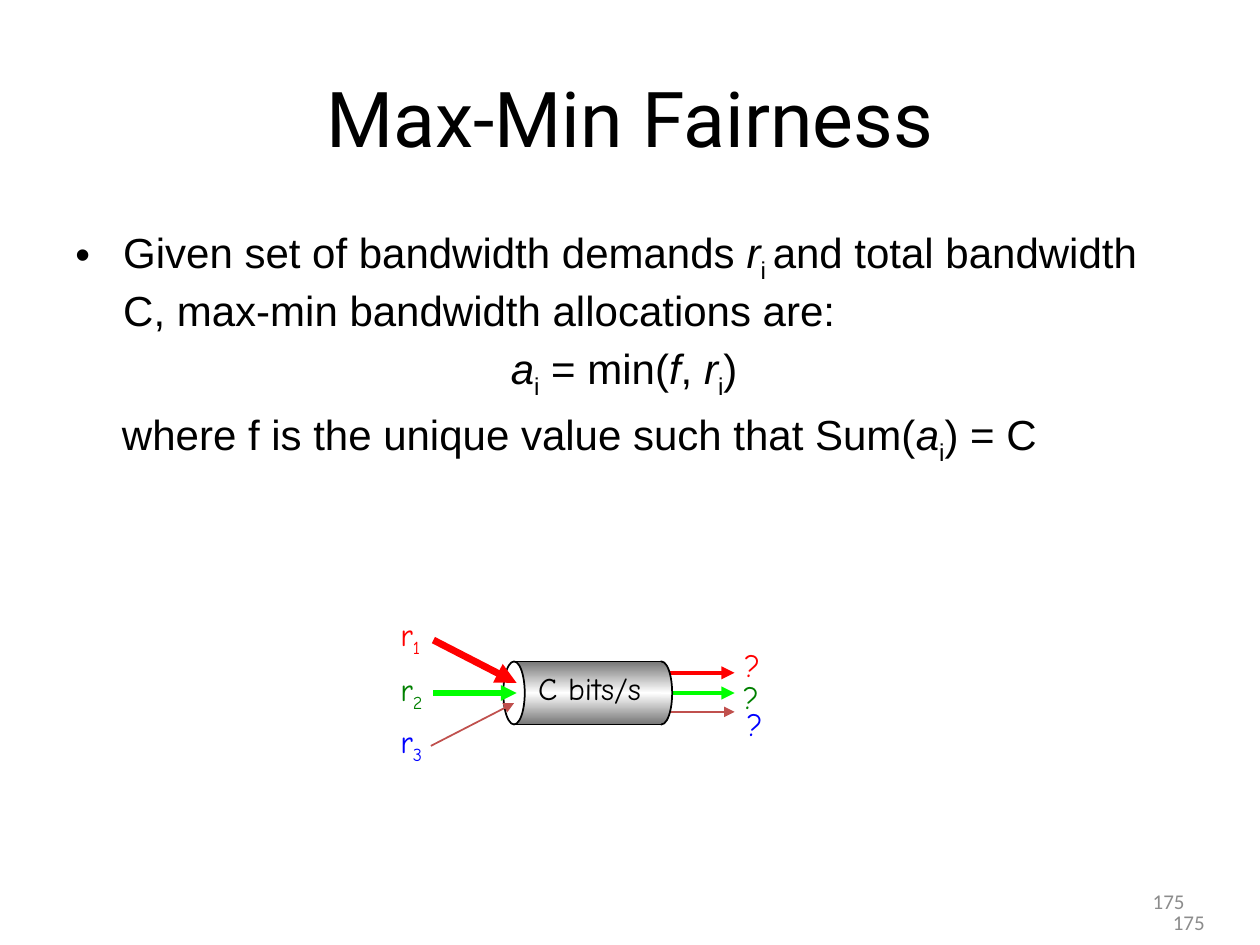
from copy import deepcopy

from lxml import etree
from pptx import Presentation
from pptx import util as u
from pptx.dml.color import RGBColor
from pptx.enum import shapes, text
from pptx.oxml.ns import qn

BLACK = RGBColor(0, 0, 0)
WHITE = RGBColor(255, 255, 255)
STEEL = RGBColor(0x76, 0x76, 0x76)
GREY = RGBColor(0x8C, 0x8C, 0x8C)
RED = RGBColor(255, 0, 0)
GREEN = RGBColor(0, 128, 0)
LIME = RGBColor(0, 255, 0)
BLUE = RGBColor(0, 0, 255)
BRICK = RGBColor(0xC0, 0x50, 0x4D)

HAND = dict(name="Comic Neue", size=u.Pt(18))
LEFT, MID, RIGHT = text.PP_ALIGN.LEFT, text.PP_ALIGN.CENTER, text.PP_ALIGN.RIGHT
TOP, CORE = text.MSO_ANCHOR.TOP, text.MSO_ANCHOR.MIDDLE


def inches(*nums):
    return [u.Inches(n) for n in nums]


def add_runs(para, runs, font, color):
    """Each run is (words, style); style is "", "i" for italic or "sub"."""
    for words, style in runs:
        run = para.add_run()
        run.text = words
        for key, val in font.items():
            setattr(run.font, key, val)
        run.font.color.rgb = color
        if style == "i":
            run.font.italic = True
        elif style == "sub":
            run._r.get_or_add_rPr().set("baseline", "-25000")


def add_text(home, at, runs, font, color, align=LEFT, anchor=TOP, wrap=False):
    """Add a text box and return its first paragraph and its frame."""
    frame = home.add_textbox(*inches(*at)).text_frame
    frame.word_wrap = wrap
    frame.vertical_anchor = anchor
    para = frame.paragraphs[0]
    para.alignment = align
    add_runs(para, runs, font, color)
    return para, frame


def set_indent(para, left, first, bullet=False):
    props = para._p.get_or_add_pPr()
    props.set("marL", str(u.Inches(left)))
    props.set("indent", str(u.Inches(first)))
    if bullet:
        etree.SubElement(props, qn("a:buFont")).set("typeface", "Arial")
        etree.SubElement(props, qn("a:buChar")).set("char", "•")


def add_body(home):
    font = dict(name="Arial", size=u.Pt(24))
    given = [("Given set of bandwidth demands ", ""), ("r", "i"), ("i ", "sub"),
             ("and total bandwidth C, max-min bandwidth allocations are:", "")]
    rule = [("a", "i"), ("i", "sub"), (" = min(", ""), ("f", "i"), (", ", ""),
            ("r", "i"), ("i", "sub"), (") ", "")]
    where = [("where f is the unique value such that Sum(", ""), ("a", "i"),
             ("i", "sub"), (") = C", "")]
    first, frame = add_text(home, (0.5, 1.75, 9, 4.95), given, font, BLACK, wrap=True)
    second, third = frame.add_paragraph(), frame.add_paragraph()
    second.alignment = MID
    add_runs(second, rule, font, BLACK)
    add_runs(third, where, font, BLACK)
    for para in (first, second, third):
        para.space_before = u.Pt(4.8)
    set_indent(first, 0.38, -0.38, bullet=True)
    set_indent(second, 0.38, -0.38)
    set_indent(third, 0.37, 0)


def add_line(home, ends, color, width, arrow=False):
    line = home.add_connector(shapes.MSO_CONNECTOR.STRAIGHT, *inches(*ends))
    line.line.color.rgb = color
    line.line.width = u.Pt(width)
    if arrow:
        etree.SubElement(line.line._get_or_add_ln(), qn("a:tailEnd")).set("type", "triangle")
    etree.SubElement(line._element.spPr, qn("a:effectLst"))
    return line


def add_solid(home, kind, at, edge=True):
    shape = home.add_shape(kind, *inches(*at))
    shape.shadow.inherit = False
    if edge:
        shape.line.color.rgb = BLACK
        shape.line.width = u.Pt(1)
    else:
        shape.line.fill.background()
    return shape


def shade(shape):
    """Fill with a steel, white, steel sweep from top to bottom."""
    fill = shape.fill
    fill.gradient()
    fill.gradient_angle = 90
    first = fill.gradient_stops[0]._gs
    first.addnext(deepcopy(first))
    for stop, (pos, color) in zip(fill.gradient_stops,
                                  ((0, STEEL), (0.5, WHITE), (1, STEEL))):
        stop.position = pos
        stop.color.rgb = color


def add_pipe(home):
    left, right, top, high, cap = 4.08, 5.25, 5.25, 0.5, 0.17
    oval, rect = shapes.MSO_SHAPE.OVAL, shapes.MSO_SHAPE.RECTANGLE
    shade(add_solid(home, oval, (right - cap / 2, top, cap, high)))
    tube = add_solid(home, rect, (left, top, right - left, high), edge=False)
    shade(tube)
    for y in (top, top + high):
        add_line(home, (left, y, right, y), BLACK, 1)
    mouth = add_solid(home, oval, (left - cap / 2, top, cap, high))
    mouth.fill.solid()
    mouth.fill.fore_color.rgb = WHITE
    return tube


def add_flow(home):
    for num, y, color in (("1", 4.83, RED), ("2", 5.27, GREEN), ("3", 5.68, BLUE)):
        add_text(home, (3.08, y, 0.43, 0.4), [("r", ""), (num, "sub")], HAND, color)
    outs = [add_line(home, (5.25, y, 5.83, y), color, width, arrow=True)
            for y, color, width in ((5.65, BRICK, 1), (5.34, RED, 2.5), (5.5, LIME, 2.5))]
    for x, y, color in ((5.8, 5.33, GREEN), (5.81, 5.08, RED), (5.83, 5.55, BLUE)):
        add_text(home, (x, y, 0.34, 0.4), [("?", "")], HAND, color)
    tube = add_pipe(home)
    outs[-1].begin_connect(tube, 3)
    for ends, color, width in (((3.44, 5.08, 4.1, 5.42), RED, 4),
                               ((3.44, 5.5, 4.1, 5.5), LIME, 3),
                               ((3.42, 5.92, 4.08, 5.58), BRICK, 1)):
        add_line(home, ends, color, width, arrow=True)
    add_text(home, (4.11, 5.26, 1.14, 0.4), [("C bits/s", "")], HAND, BLACK, MID, CORE)


def main():
    deck = Presentation()
    deck.slide_width, deck.slide_height = inches(10, 7.5)
    slide = deck.slides.add_slide(deck.slide_layouts[6])
    home = slide.shapes
    add_text(home, (0.5, 0.3, 9, 1.25), [("Max-Min Fairness", "")],
             dict(name="Roboto", size=u.Pt(44)), BLACK, MID, CORE, wrap=True)
    add_body(home)
    add_flow(home.add_group_shape().shapes)
    for x, y in ((7.17, 6.95), (7.33, 7.12)):
        add_text(home, (x, y, 2.33, 0.4), [("175", "")],
                 dict(name="Calibri", size=u.Pt(12)), GREY, RIGHT, CORE, wrap=True)
    deck.save("out.pptx")


if __name__ == "__main__":
    main()
